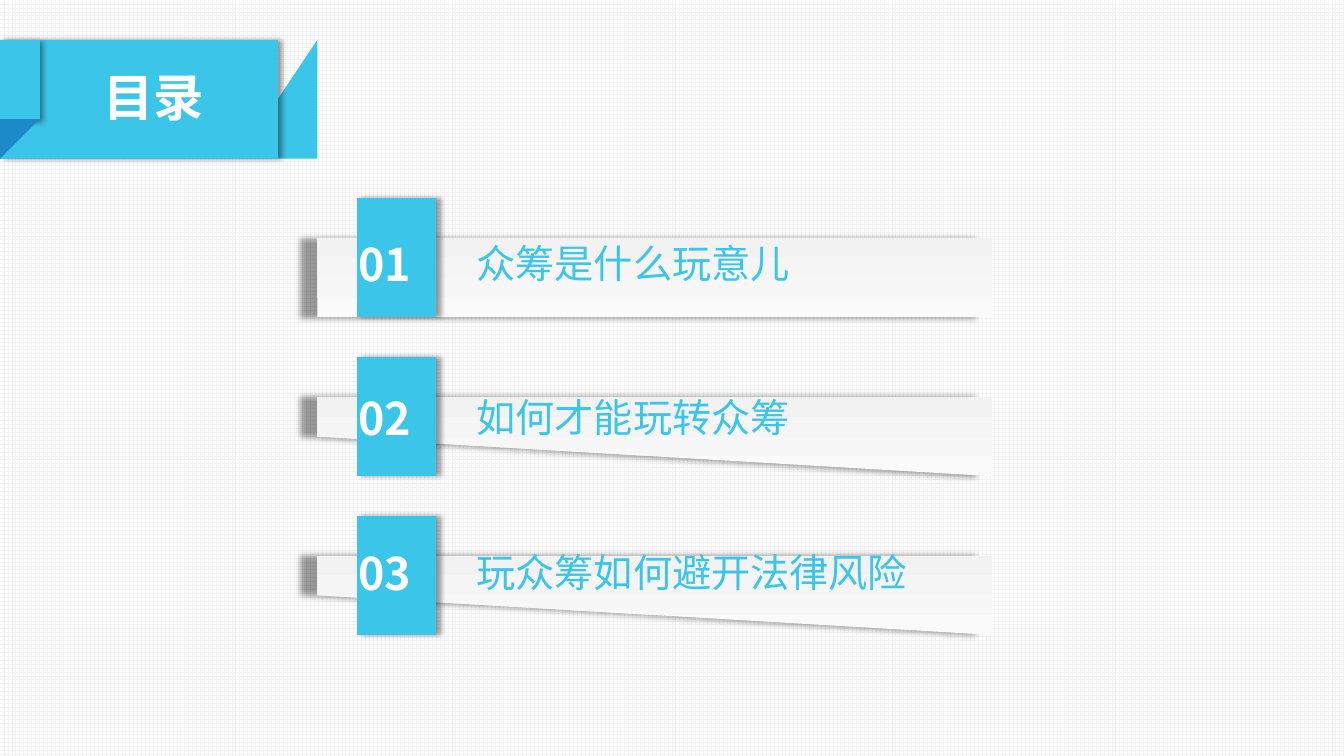
from dataclasses import dataclass

from lxml.etree import SubElement
from pptx import Presentation
from pptx.dml.color import RGBColor
from pptx.enum.dml import MSO_PATTERN
from pptx.enum.shapes import MSO_SHAPE
from pptx.enum.text import MSO_ANCHOR, MSO_AUTO_SIZE, PP_ALIGN
from pptx.oxml.ns import qn
from pptx.util import Cm, Pt

# Content
TITLE = "目录"
TOPICS = ["众筹是什么玩意儿", "如何才能玩转众筹", "玩众筹如何避开法律风险"]


@dataclass(frozen=True)
class Theme:
    font: str = "Noto Sans CJK SC"
    main: str = "3BC5E9"
    fold: str = "1B89C7"
    white: str = "FFFFFF"
    grid: str = "F2F2F2"
    bar_top: str = "F2F2F2"
    bar_bottom: str = "FAFAFA"
    shadow: str = "000000"
    title: int = 36
    number: int = 32
    topic: int = 28


T = Theme()

# Shadows: blur (pt), distance (pt), direction (degrees)
SOFT, DIAGONAL, LEFT = (4, 3, 0), (4, 3, 45), (5, 12, 180)

# Ribbon pieces from back to front: corners in cm, colour, shadow
RIBBON = [
    ([(7.95, 1.04), (8.15, 3.58), (5.82, 4.11)], T.main, None),
    ([(6.22, 1.68), (6.6, 2.08), (6.65, 2.21), (7.19, 3.63), (5.84, 4.11)], T.fold, None),
    ([(0.43, 1.24), (6.91, 1.24), (7.19, 3.61), (0.43, 3.61)], T.main, SOFT),
    ([(0, 0.97), (0.95, 1.04), (0.89, 3.43), (0, 3.35)], T.main, DIAGONAL),
    ([(0.43, 3.38), (0.91, 3.45), (0.43, 3.58)], T.fold, None),
]

# Topic rows, in cm
ROW_TOP, ROW_PITCH = 5.45, 3.9
BAR_LEFT, BAR_RIGHT, BAR_DROP = 8.15, 25.48, 0.32
TAB_LEFT, TAB_RIGHT = 8.61, 10.77


def rgb(color):
    return RGBColor.from_string(color)


def add_shadow(sp, blur, dist, angle):
    effects = sp._element.spPr.find(qn("a:effectLst"))
    outer = SubElement(effects, qn("a:outerShdw"), blurRad=str(Pt(blur)), dist=str(Pt(dist)),
                       dir=str(angle * 60000), algn="ctr", rotWithShape="0")
    color = SubElement(outer, qn("a:srgbClr"), val=T.shadow)
    SubElement(color, qn("a:alpha"), val="40000")


def paint(sp, color, shadow=None):
    sp.fill.solid()
    sp.fill.fore_color.rgb = rgb(color)
    sp.line.fill.background()
    sp.shadow.inherit = False
    if shadow:
        add_shadow(sp, *shadow)


def add_polygon(shapes, corners, color, shadow=None):
    builder = shapes.build_freeform(*corners[0], scale=Cm(1))
    builder.add_line_segments(corners[1:], close=True)
    sp = builder.convert_to_shape()
    paint(sp, color, shadow)
    return sp


def write(sp, text, size, color, bold, align):
    tf = sp.text_frame
    tf.word_wrap = True
    tf.auto_size = MSO_AUTO_SIZE.NONE
    tf.vertical_anchor = MSO_ANCHOR.MIDDLE
    p = tf.paragraphs[0]
    p.text = text
    p.alignment = align
    p.font.size, p.font.bold, p.font.name = Pt(size), bold, T.font
    p.font.color.rgb = rgb(color)
    SubElement(p._p.pPr.find(qn("a:defRPr")), qn("a:ea"), typeface=T.font)


def add_row(slide, index, topic):
    top = ROW_TOP + index * ROW_PITCH
    shapes = slide.shapes.add_group_shape().shapes

    # Folded corner behind the tab
    corner = shapes.add_shape(MSO_SHAPE.RIGHT_TRIANGLE, Cm(TAB_RIGHT), Cm(top),
                              Cm(0.18), Cm(BAR_DROP))
    paint(corner, T.main)

    # Bar, lighter towards the bottom
    bar = add_polygon(shapes, [(BAR_RIGHT, top + BAR_DROP), (BAR_LEFT, top + BAR_DROP),
                               (BAR_LEFT, top + 2.07), (BAR_RIGHT, top + 2.3)],
                      T.bar_top, LEFT)
    bar.fill.gradient()
    bar.fill.gradient_angle = 90
    for stop, color in zip(bar.fill.gradient_stops, (T.bar_bottom, T.bar_top)):
        stop.color.rgb = rgb(color)

    # Tab, number and topic
    add_polygon(shapes, [(TAB_LEFT, top), (TAB_RIGHT, top), (TAB_RIGHT, top + 2.4),
                         (TAB_LEFT, top + 2.6)], T.main, SOFT)
    number = shapes.add_textbox(Cm(8.66), Cm(top + 0.37), Cm(2.08), Cm(1.63))
    write(number, f"{index + 1:02d}", T.number, T.white, True, PP_ALIGN.CENTER)
    label = shapes.add_textbox(Cm(11.76), Cm(top + 0.44), Cm(13.26), Cm(1.45))
    write(label, topic, T.topic, T.main, False, PP_ALIGN.LEFT)


def main():
    prs = Presentation()
    prs.slide_width, prs.slide_height = Cm(33.87), Cm(19.05)
    slide = prs.slides.add_slide(prs.slide_layouts[5])

    # Grid background
    fill = slide.background.fill
    fill.patterned()
    fill.pattern = MSO_PATTERN.LARGE_GRID
    fill.fore_color.rgb, fill.back_color.rgb = rgb(T.grid), rgb(T.white)

    # Ribbon with the title in front
    ribbon = slide.shapes.add_group_shape()
    for corners, color, shadow in RIBBON:
        add_polygon(ribbon.shapes, corners, color, shadow)
    title = slide.shapes.title
    title.left, title.top, title.width, title.height = Cm(1.19), Cm(1.52), Cm(5.36), Cm(1.8)
    write(title, TITLE, T.title, T.white, True, PP_ALIGN.CENTER)
    ribbon._element.addnext(title._element)

    # Topics
    for index, topic in enumerate(TOPICS):
        add_row(slide, index, topic)

    prs.save("out.pptx")


if __name__ == "__main__":
    main()
